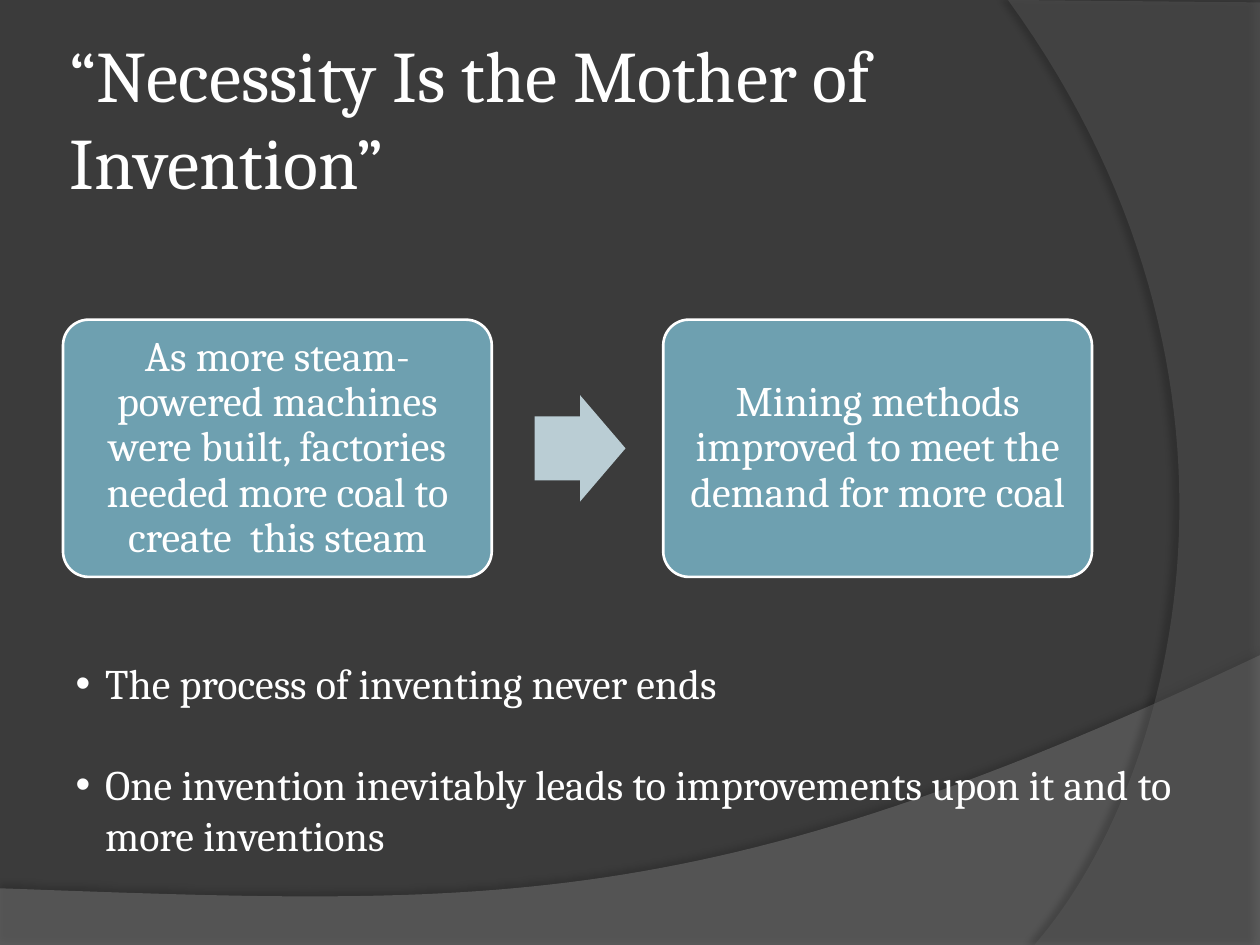
from lxml.etree import SubElement
from pptx import Presentation
from pptx.dml.color import RGBColor
from pptx.enum.shapes import MSO_SHAPE
from pptx.enum.text import MSO_ANCHOR, MSO_AUTO_SIZE, PP_ALIGN
from pptx.oxml.ns import qn
from pptx.util import Pt

FONT = "Cambria"
WHITE = "FFFFFF"


def rgb(colour):
    return RGBColor.from_string(colour)


def style_paragraph(para, size, align):
    para.alignment = align
    para.font.name = FONT
    para.font.size = Pt(size)
    para.font.color.rgb = rgb(WHITE)


deck = Presentation()
deck.slide_width, deck.slide_height = Pt(720), Pt(540)
page = deck.slides.add_slide(deck.slide_layouts[1])
page.background.fill.solid()
page.background.fill.fore_color.rgb = rgb("3B3B3B")
title, body = page.placeholders

# Background bands: a Bezier edge, then the straight corners that close it.
# edge, corners, colour, opacity %, shadow opacity %, distance, direction
bands = [
    ([(720, 374.4), (402.5, 524.9), (281.5, 517.7), (0, 507.6)],
     [(0, 540.7), (720, 540.7)], "7F7F7F", 45, 35, 3.5, 270),
    ([(591.1, 540), (673.2, 445.7), (733, 216), (576, 0)],
     [(720, 1.4), (720, 540)], "5E5E5E", 40, 45, 4, 180),
]
STEPS = 60
for edge, corners, colour, opacity, shade, distance, direction in bands:
    points = []
    for step in range(STEPS + 1):
        t = step / STEPS
        weights = [(1 - t) ** 3, 3 * t * (1 - t) ** 2, 3 * t * t * (1 - t), t ** 3]
        points.append(tuple(sum(w * point[axis] for w, point in zip(weights, edge))
                            for axis in (0, 1)))
    points = [(Pt(x), Pt(y)) for x, y in points + corners]
    builder = page.shapes.build_freeform(*points[0])
    builder.add_line_segments(points[1:], close=True)
    band = builder.convert_to_shape()
    band.fill.solid()
    band.fill.fore_color.rgb = rgb(colour)
    band.line.fill.background()
    properties = band.element.spPr
    fill_colour = properties.find(qn("a:solidFill"))[0]
    SubElement(fill_colour, qn("a:alpha"), val=str(opacity * 1000))
    effects = SubElement(properties, qn("a:effectLst"))
    shadow = SubElement(effects, qn("a:outerShdw"), blurRad=str(Pt(4)),
                        dist=str(Pt(distance)), dir=str(direction * 60000),
                        algn="ctr", rotWithShape="0")
    shadow_colour = SubElement(shadow, qn("a:srgbClr"), val="000000")
    SubElement(shadow_colour, qn("a:alpha"), val=str(shade * 1000))
    title.element.addprevious(band.element)

# Title
title.left, title.top, title.width, title.height = Pt(36), Pt(21.6), Pt(588), Pt(90)
frame = title.text_frame
frame.text = "“Necessity Is the Mother of Invention”"
frame.auto_size = MSO_AUTO_SIZE.NONE
frame.vertical_anchor = MSO_ANCHOR.MIDDLE
frame.margin_left = frame.margin_right = frame.margin_top = frame.margin_bottom = Pt(3.6)
style_paragraph(frame.paragraphs[0], 41.4, PP_ALIGN.LEFT)

# Cause and effect boxes
BOX_TOP, BOX_WIDTH, BOX_HEIGHT = 182.7, 245, 147
steps = [
    "As more steam-powered machines were built, factories needed more coal to create  this steam",
    "Mining methods improved to meet the demand for more coal",
]
for index, text in enumerate(steps):
    box = page.shapes.add_shape(MSO_SHAPE.ROUNDED_RECTANGLE, Pt(36 + 343 * index),
                                Pt(BOX_TOP), Pt(BOX_WIDTH), Pt(BOX_HEIGHT))
    box.adjustments[0] = 0.1
    box.shadow.inherit = False
    box.fill.solid()
    box.fill.fore_color.rgb = rgb("6EA0B0")
    box.line.color.rgb = rgb(WHITE)
    box.line.width = Pt(1.5)
    frame = box.text_frame
    frame.text = text
    frame.word_wrap = True
    frame.vertical_anchor = MSO_ANCHOR.MIDDLE
    frame.margin_left = frame.margin_right = frame.margin_top = frame.margin_bottom = Pt(2.9)
    para = frame.paragraphs[0]
    style_paragraph(para, 24, PP_ALIGN.CENTER)
    para.line_spacing = 0.9

arrow = page.shapes.add_shape(MSO_SHAPE.RIGHT_ARROW, Pt(305.5), Pt(225.8), Pt(52), Pt(60.8))
arrow.adjustments[0], arrow.adjustments[1] = 0.6, 0.5
arrow.shadow.inherit = False
arrow.fill.solid()
arrow.fill.fore_color.rgb = rgb("BACDD4")
arrow.line.fill.background()

# Bulleted conclusions
body.left, body.top, body.width, body.height = Pt(36), Pt(372.3), Pt(648), Pt(124)
frame = body.text_frame
frame.text = ("The process of inventing never ends\n"
              "One invention inevitably leads to improvements upon it and to more inventions")
frame.auto_size = MSO_AUTO_SIZE.NONE
frame.vertical_anchor = MSO_ANCHOR.TOP
for index, para in enumerate(frame.paragraphs):
    style_paragraph(para, 24, PP_ALIGN.LEFT)
    para.space_before = Pt(29 * index)
    settings = para._p.get_or_add_pPr()
    settings.set("marL", str(Pt(16.9)))
    settings.set("indent", str(-Pt(16.9)))
    SubElement(settings, qn("a:buFont"), typeface="Arial")
    SubElement(settings, qn("a:buChar"), char="•")
    settings.append(settings.find(qn("a:defRPr")))

deck.save("out.pptx")
